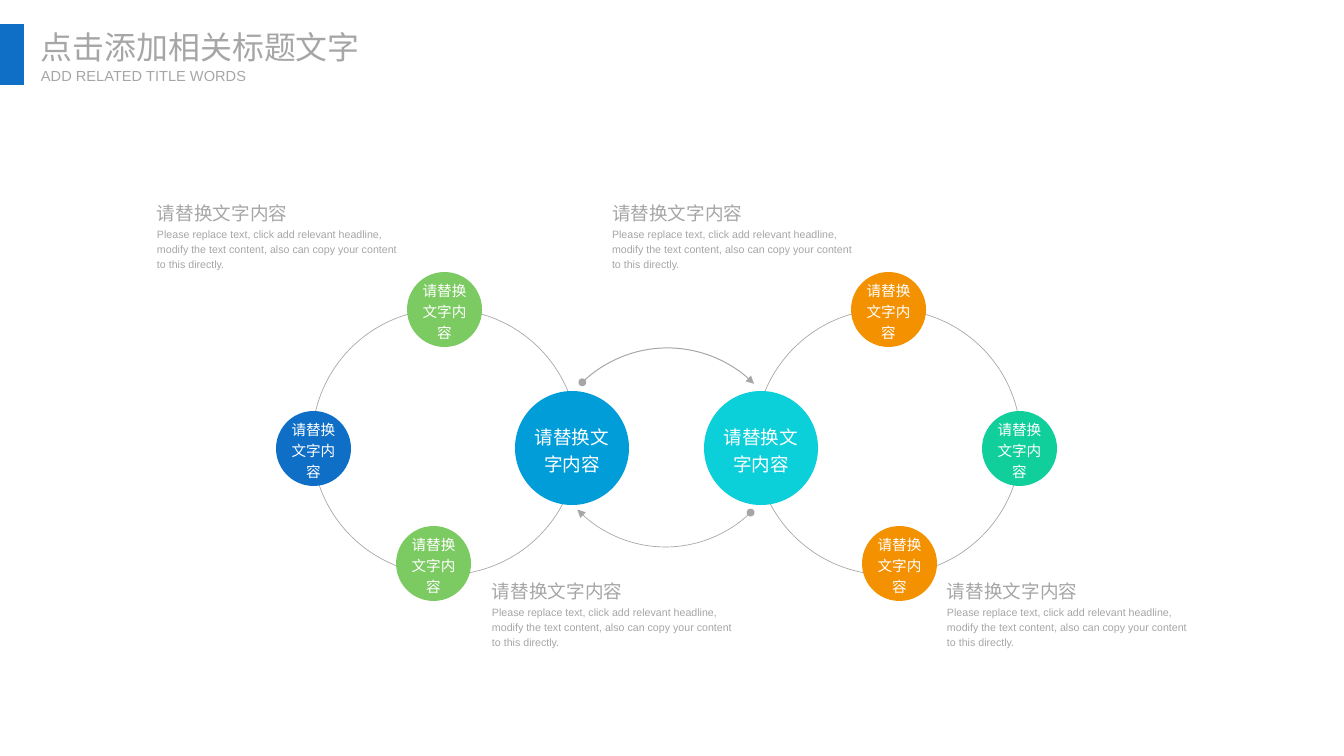
from dataclasses import dataclass

from lxml import etree
from pptx import Presentation
from pptx import util as u
from pptx.dml.color import RGBColor
from pptx.enum import shapes, text
from pptx.oxml.ns import qn

PX = 9565
MIRROR_SUM = 1333
GRAY = "A6A6A6"
WHITE = "FFFFFF"
BLUE = "0F6FC6"
LATIN = "Arial"
CJK = "Noto Sans CJK SC"
LABEL = "请替换文字内容"
DETAIL = (
    "Please replace text, click add relevant headline, modify the text content, "
    "also can copy your content to this directly."
)


@dataclass
class Disc:
    left: int
    top: int
    size: int
    points: int
    left_color: str
    right_color: str


@dataclass
class Arc:
    left: int
    top: int
    size: int
    start: int
    end: int
    weight: float


@dataclass
class Caption:
    left: int
    top: int


DISCS = [
    Disc(515, 391, 114, 14, "009DD9", "0BD0D9"),
    Disc(276, 411, 75, 11, BLUE, "10CF9B"),
    Disc(407, 272, 75, 11, "7CCA62", "F49100"),
    Disc(396, 526, 75, 11, "7CCA62", "F49100"),
]
ARCS = [
    Arc(545, 348, 245, 226, 315, 0.75),
    Arc(543, 302, 245, 46, 136, 0.5),
]
CAPTIONS = [Caption(492, 575), Caption(947, 575), Caption(157, 197), Caption(612, 197)]


def px(length: int) -> u.Emu:
    return u.Emu(length * PX)


def rgb(color: str) -> RGBColor:
    return RGBColor.from_string(color)


def write(frame, words: str, *, size: int, color: str = GRAY, font: str = LATIN,
          spacing: float = 1.0, align=text.PP_ALIGN.LEFT,
          anchor=text.MSO_ANCHOR.TOP, wrap: bool = False) -> None:
    frame.margin_left = frame.margin_right = 0
    frame.margin_top = frame.margin_bottom = 0
    frame.word_wrap = wrap
    frame.vertical_anchor = anchor
    paragraph = frame.paragraphs[0]
    paragraph.alignment = align
    paragraph.line_spacing = spacing
    run = paragraph.add_run()
    run.text = words
    run.font.size = u.Pt(size)
    run.font.color.rgb = rgb(color)
    run.font.name = font
    etree.SubElement(run.font._element, qn("a:ea"), typeface=CJK)


def add_text(slide, words: str, left: int, top: int, width: int, height: int,
             **style) -> None:
    box = slide.shapes.add_textbox(px(left), px(top), px(width), px(height))
    write(box.text_frame, words, **style)


def add_figure(slide, kind, left: int, top: int, width: int, height: int,
               fill: str | None = None, weight: float = 0):
    figure = slide.shapes.add_shape(kind, px(left), px(top), px(width), px(height))
    figure.shadow.inherit = False
    if fill:
        figure.fill.solid()
        figure.fill.fore_color.rgb = rgb(fill)
    else:
        figure.fill.background()
    if weight:
        figure.line.color.rgb = rgb(GRAY)
        figure.line.width = u.Pt(weight)
    else:
        figure.line.fill.background()
    return figure


def add_disc(slide, disc: Disc, left: int, color: str) -> None:
    figure = add_figure(slide, shapes.MSO_SHAPE.OVAL, left, disc.top,
                        disc.size, disc.size, fill=color)
    write(figure.text_frame, LABEL, size=disc.points, color=WHITE, spacing=1.2,
          align=text.PP_ALIGN.CENTER, anchor=text.MSO_ANCHOR.MIDDLE, wrap=True)


def add_arc(slide, arc: Arc) -> None:
    figure = add_figure(slide, shapes.MSO_SHAPE.ARC, arc.left, arc.top,
                        arc.size, arc.size, weight=arc.weight)
    for index, degrees in enumerate((arc.start, arc.end)):
        figure.adjustments[index] = degrees * 0.6
    line = figure.line._get_or_add_ln()
    etree.SubElement(line, qn("a:headEnd"), type="oval")
    etree.SubElement(line, qn("a:tailEnd"), type="triangle")


def add_caption(slide, caption: Caption) -> None:
    add_text(slide, DETAIL, caption.left, caption.top + 28, 247, 46,
             size=8, spacing=1.2, wrap=True)
    add_text(slide, LABEL, caption.left, caption.top, 131, 27, size=14, spacing=1.2)


def main() -> None:
    deck = Presentation()
    deck.slide_width, deck.slide_height = px(1344), px(756)
    slide = deck.slides.add_slide(deck.slide_layouts[6])

    ring_left, ring_top, ring_size = 312, 309, 266
    for left in (ring_left, MIRROR_SUM - ring_left - ring_size):
        add_figure(slide, shapes.MSO_SHAPE.OVAL, left, ring_top,
                   ring_size, ring_size, weight=0.5)
    for disc in DISCS:
        add_disc(slide, disc, disc.left, disc.left_color)
        add_disc(slide, disc, MIRROR_SUM - disc.left - disc.size, disc.right_color)
    for arc in ARCS:
        add_arc(slide, arc)
    for caption in CAPTIONS:
        add_caption(slide, caption)

    add_figure(slide, shapes.MSO_SHAPE.RECTANGLE, 0, 24, 24, 61, fill=BLUE)
    add_text(slide, "点击添加相关标题文字", 41, 28, 322, 38, size=24, font=CJK)
    add_text(slide, "ADD RELATED TITLE WORDS", 41, 67, 208, 18, size=11)

    deck.save("out.pptx")


if __name__ == "__main__":
    main()
